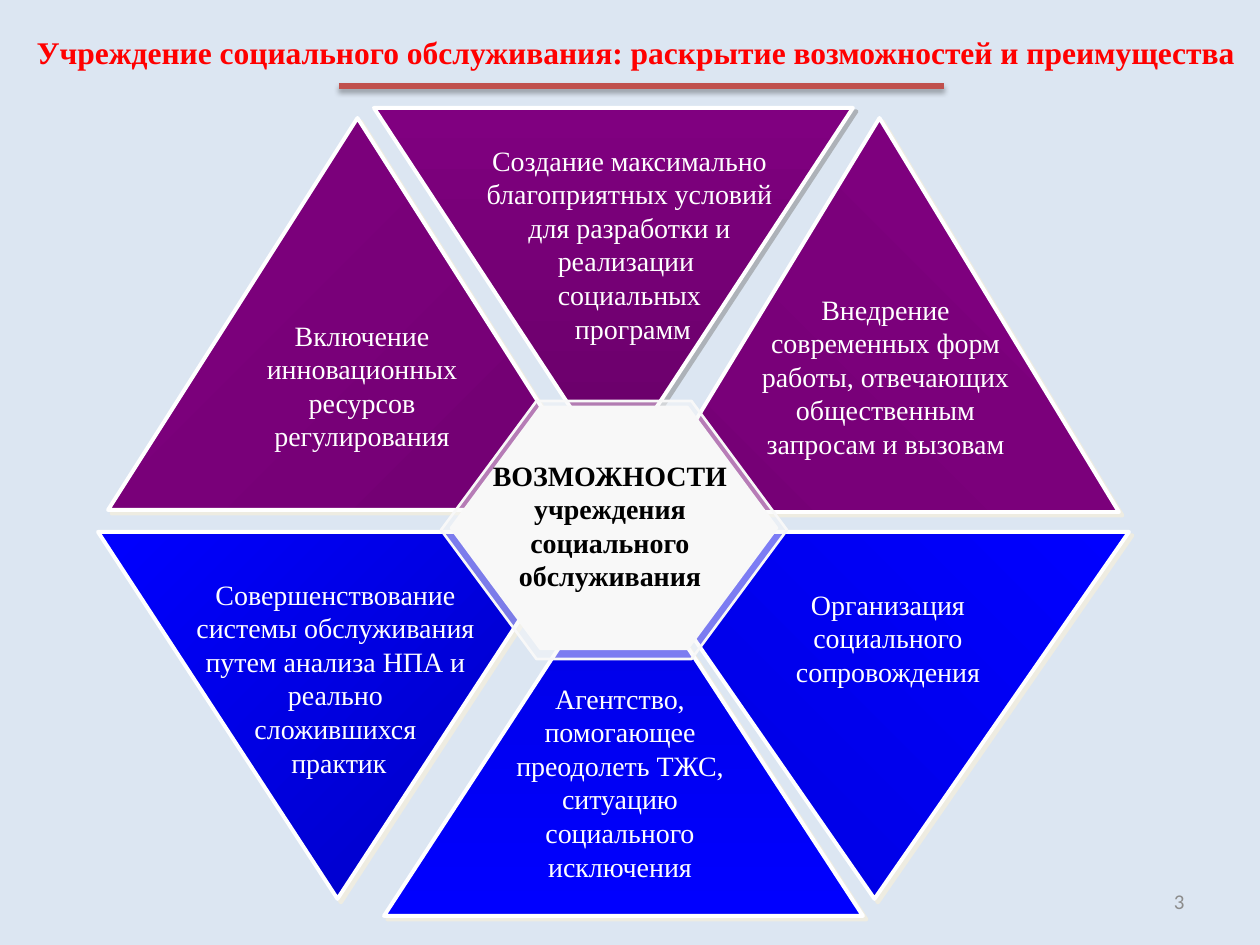
from dataclasses import dataclass

from lxml import etree
from pptx import Presentation
from pptx.dml.color import RGBColor
from pptx.enum.shapes import MSO_CONNECTOR, MSO_SHAPE
from pptx.enum.text import MSO_ANCHOR, MSO_AUTO_SIZE, PP_ALIGN
from pptx.oxml.ns import qn
from pptx.util import Emu, Inches, Pt

TRIANGLE, HEXAGON = MSO_SHAPE.ISOSCELES_TRIANGLE, MSO_SHAPE.HEXAGON
STRAIGHT = MSO_CONNECTOR.STRAIGHT
LEFT, CENTER, RIGHT = PP_ALIGN.LEFT, PP_ALIGN.CENTER, PP_ALIGN.RIGHT
TOP, MIDDLE = MSO_ANCHOR.TOP, MSO_ANCHOR.MIDDLE
GROW, FIXED = MSO_AUTO_SIZE.SHAPE_TO_FIT_TEXT, MSO_AUTO_SIZE.NONE
PX_PER_INCH = 126


@dataclass(frozen=True)
class Theme:
    """Colours, fonts and type sizes of the slide."""
    background: str = "DCE6F2"
    title: str = "FF0000"
    rule: str = "C0504D"
    white: str = "FFFFFF"
    black: str = "000000"
    hub: str = "F8F8F8"
    number: str = "8C8C8C"
    purple: str = "800080"
    blue: str = "0000FF"
    shade: str = "EEECE1"
    grey_shade: str = "808080"
    serif: str = "Times New Roman"
    sans: str = "Calibri"
    title_size: int = 18
    text_size: int = 16
    number_size: int = 12


THEME = Theme()

TRIANGLES = [
    ((98, 532, 479, 367), True, (THEME.blue, "0000BE"), 315, (THEME.shade, 100)),
    ((640, 118, 479, 394), False, ("760076", THEME.purple), 315, (THEME.shade, 100)),
    ((108, 118, 499, 392), False, (THEME.purple, "720072"), 45, (THEME.shade, 100)),
    ((374, 108, 479, 365), True, ("670067", THEME.purple), 90, (THEME.grey_shade, 50)),
    ((384, 549, 479, 367), False, ("0000E2", THEME.blue), 90, (THEME.shade, 100)),
    ((620, 532, 509, 367), True, ("0000DE", THEME.blue), 45, (THEME.shade, 100)),
]

LABELS = [
    ((462, 137, 335, 217), "Создание максимально благоприятных условий для разработки и "
                           "реализации \nсоциальных\n программ"),
    ((759, 581, 258, 115), "Организация социального сопровождения"),
    ((491, 675, 258, 217), "Агентство, помогающее преодолеть ТЖС, ситуацию "
                           "социального исключения"),
    ((233, 312, 258, 165), "Включение инновационных ресурсов регулирования"),
    ((738, 286, 295, 183), "Внедрение современных форм работы, отвечающих "
                           "общественным запросам и вызовам"),
    ((178, 571, 315, 217), "Совершенствование системы обслуживания путем анализа НПА и\n"
                           " реально \vсложившихся\n практик"),
]


def px(n):
    """Turn pixels into EMU."""
    return Emu(round(n * 914400 / PX_PER_INCH))


def rgb(color):
    """Make a colour from its hex code."""
    return RGBColor.from_string(color)


def add_alpha(color, percent):
    """Set the opacity of a colour element."""
    etree.SubElement(color, qn("a:alpha")).set("val", str(percent * 1000))


def set_shadow(s, color, opacity, blur, dist, angle):
    """Give a shape or connector an outer shadow, in points and degrees."""
    effects = etree.SubElement(s._element.spPr, qn("a:effectLst"))
    shadow = etree.SubElement(effects, qn("a:outerShdw"), blurRad=str(Pt(blur)),
                              dist=str(Pt(dist)), dir=str(angle * 60000),
                              algn="ctr", rotWithShape="0")
    add_alpha(etree.SubElement(shadow, qn("a:srgbClr"), val=color), opacity)


def write(tf, text, *, size=THEME.text_size, color=THEME.white, font=THEME.serif,
          bold=False, align=CENTER, anchor=TOP, wrap=True, fit=GROW):
    """Fill a text frame and format each of its paragraphs."""
    tf.text = text
    tf.word_wrap, tf.auto_size, tf.vertical_anchor = wrap, fit, anchor
    for p in tf.paragraphs:
        p.alignment = align
        for r in p.runs:
            r.font.name, r.font.size, r.font.bold = font, Pt(size), bold
            r.font.color.rgb = rgb(color)


def add_label(slide, box, text, **fmt):
    """Add a text box."""
    write(slide.shapes.add_textbox(*map(px, box)).text_frame, text, **fmt)


def add_title(slide, box, text):
    """Place and fill the title placeholder."""
    s = slide.shapes.title
    s.left, s.top, s.width, s.height = map(px, box)
    write(s.text_frame, text, size=THEME.title_size, color=THEME.title, bold=True,
          align=LEFT, wrap=False)


def add_rule(slide, x1, x2, y):
    """Draw the shadowed line under the title."""
    s = slide.shapes.add_connector(STRAIGHT, px(x1), px(y), px(x2), px(y))
    s.line.color.rgb, s.line.width = rgb(THEME.rule), Pt(3)
    set_shadow(s, THEME.black, 35, 3.1, 1.8, 90)


def add_triangle(slide, box, flipped, colors, angle, shade):
    """Add a gradient triangle with a hard shadow."""
    s = slide.shapes.add_shape(TRIANGLE, *map(px, box))
    if flipped:
        s._element.spPr.xfrm.set("flipV", "1")
    s.fill.gradient()
    s.fill.gradient_angle = 360 - angle
    for stop, color in zip(s.fill.gradient_stops, colors):
        stop.color.rgb = rgb(color)
    s.line.color.rgb, s.line.width = rgb(THEME.white), Pt(2.25)
    set_shadow(s, *shade, 0, 2.8, 45)


def add_hexagon(slide, box, opacity=100):
    """Add one layer of the central hexagon."""
    s = slide.shapes.add_shape(HEXAGON, *map(px, box))
    s.shadow.inherit = False
    s.adjustments[0] = 0.37
    s.fill.solid()
    s.fill.fore_color.rgb = rgb(THEME.hub)
    if opacity < 100:
        add_alpha(s._element.spPr.find(qn("a:solidFill"))[0], opacity)
    s.line.color.rgb, s.line.width = rgb(THEME.hub), Pt(1.5)


def main():
    """Build the slide and save it."""
    prs = Presentation()
    prs.slide_width, prs.slide_height = Inches(10), Inches(7.5)
    slide = prs.slides.add_slide(prs.slide_layouts[5])
    slide.background.fill.solid()
    slide.background.fill.fore_color.rgb = rgb(THEME.background)
    add_title(slide, (24, 27, 1236, 50),
              "Учреждение социального обслуживания: раскрытие возможностей и преимущества")
    add_rule(slide, 339, 944, 86)
    for triangle in TRIANGLES:
        add_triangle(slide, *triangle)
    add_hexagon(slide, (441, 401, 346, 258), opacity=50)
    add_hexagon(slide, (451, 407, 326, 242))
    for box, text in LABELS:
        add_label(slide, box, text)
    add_label(slide, (472, 452, 276, 149),
              "ВОЗМОЖНОСТИ учреждения социального обслуживания",
              color=THEME.black, bold=True)
    add_label(slide, (903, 876, 294, 50), "3", size=THEME.number_size,
              color=THEME.number, font=THEME.sans, align=RIGHT, anchor=MIDDLE, fit=FIXED)
    prs.save("out.pptx")


if __name__ == "__main__":
    main()
